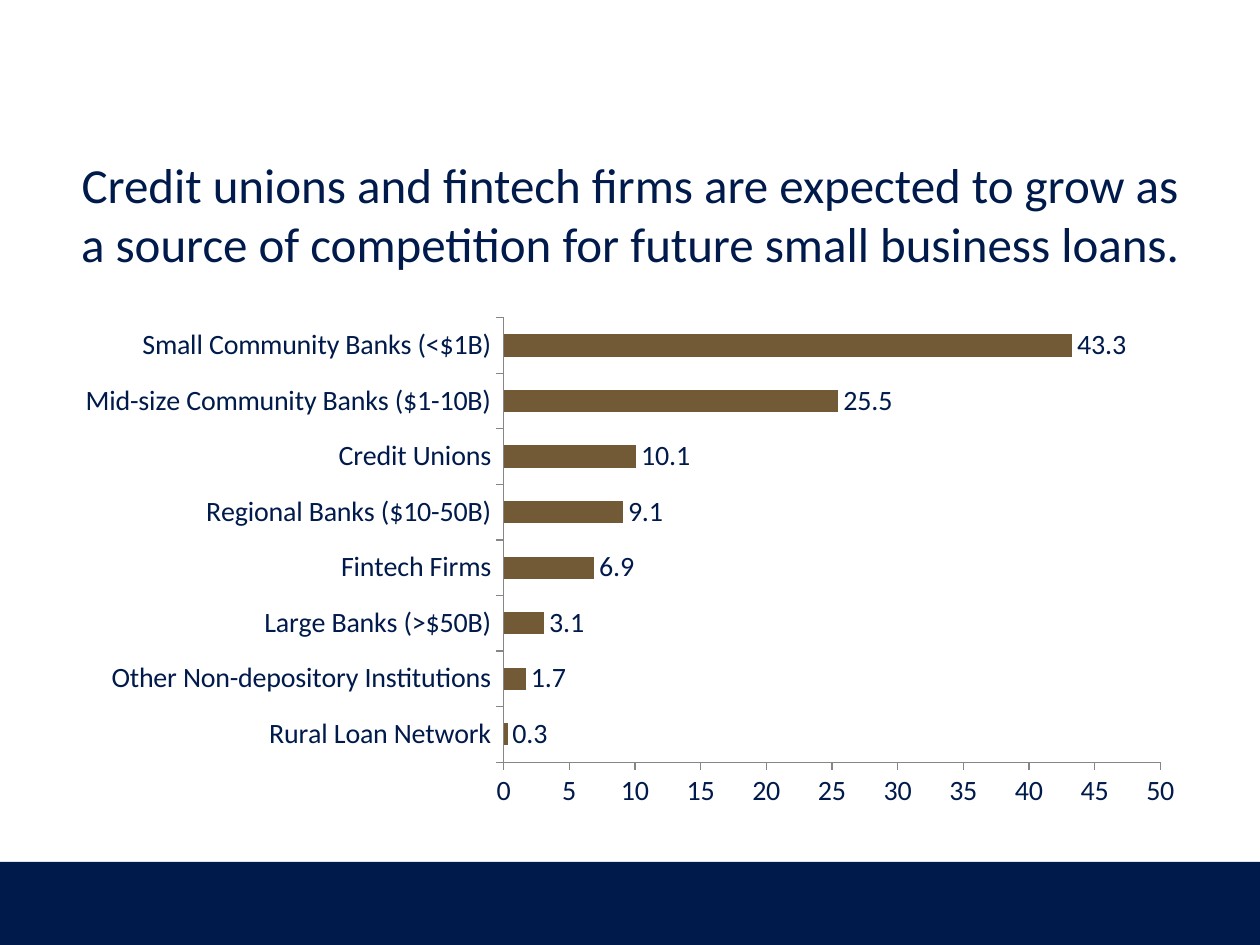
from pptx import Presentation
from pptx import util as u
from pptx.chart.data import CategoryChartData
from pptx.dml.color import RGBColor
from pptx.enum import chart as ch, shapes, text

COLORS = {"navy": "001A4B", "brown": "715A35", "axis": "868686", "white": "FFFFFF"}
FONT = "Calibri"
WIDTH, HEIGHT = 10, 7.5

LENDERS = [
    ("Rural Loan Network", 0.3),
    ("Other Non-depository Institutions", 1.7),
    ("Large Banks (>$50B)", 3.1),
    ("Fintech Firms", 6.9),
    ("Regional Banks ($10-50B)", 9.1),
    ("Credit Unions", 10.1),
    ("Mid-size Community Banks ($1-10B)", 25.5),
    ("Small Community Banks (<$1B)", 43.3),
]


def rgb(name):
    return RGBColor.from_string(COLORS[name])


def set_font(font, size, color="navy"):
    font.name = FONT
    font.size = u.Pt(size)
    font.color.rgb = rgb(color)


def write(tf, words, size=16, color="navy", align=text.PP_ALIGN.CENTER):
    p = tf.paragraphs[0]
    p.alignment = align
    r = p.add_run()
    r.text = words
    set_font(r.font, size, color)


class Deck:
    """Holds the style and the current slide; boxes are in inches on the slide."""

    def __init__(self):
        self.prs = Presentation()
        self.prs.slide_width = u.Inches(WIDTH)
        self.prs.slide_height = u.Inches(HEIGHT)
        self.s = self.prs.slides.add_slide(self.prs.slide_layouts[6])
        fill = self.s.background.fill
        fill.solid()
        fill.fore_color.rgb = rgb("white")

    def box(self, x, y, w, h):
        return [u.Inches(v) for v in (x, y, w, h)]

    def band(self, *at, color="navy"):
        sp = self.s.shapes.add_shape(shapes.MSO_SHAPE.RECTANGLE, *self.box(*at))
        sp.shadow.inherit = False
        sp.fill.solid()
        sp.fill.fore_color.rgb = rgb(color)
        sp.line.fill.background()

    def title(self, words, *at, **fmt):
        tf = self.s.shapes.add_textbox(*self.box(*at)).text_frame
        tf.word_wrap = True
        tf.vertical_anchor = text.MSO_ANCHOR.MIDDLE
        write(tf, words, **fmt)

    def bar_chart(self, rows, *at, size=16, top=50, step=5):
        data = CategoryChartData(number_format="General")
        data.categories = [name for name, _ in rows]
        data.add_series("Series 1", [value for _, value in rows])
        chart = self.s.shapes.add_chart(
            ch.XL_CHART_TYPE.BAR_CLUSTERED, *self.box(*at), data).chart
        chart.has_legend = chart.has_title = False
        set_font(chart.font, size)

        # Axes
        for axis in (chart.category_axis, chart.value_axis):
            axis.has_major_gridlines = False
            axis.major_tick_mark = ch.XL_TICK_MARK.OUTSIDE
            axis.minor_tick_mark = ch.XL_TICK_MARK.NONE
            axis.format.line.color.rgb = rgb("axis")
            axis.format.line.width = u.Pt(0.75)
            set_font(axis.tick_labels.font, size)
        chart.value_axis.minimum_scale = 0
        chart.value_axis.maximum_scale = top
        chart.value_axis.major_unit = step

        # Bars and their values
        plot = chart.plots[0]
        plot.gap_width = 150
        plot.vary_by_categories = False
        fill = plot.series[0].format.fill
        fill.solid()
        fill.fore_color.rgb = rgb("brown")
        plot.has_data_labels = True
        labels = plot.data_labels
        labels.show_value = True
        labels.number_format = "#,##0.0"
        labels.number_format_is_linked = False
        labels.position = ch.XL_LABEL_POSITION.OUTSIDE_END
        set_font(labels.font, size)


def main():
    deck = Deck()
    margin, band = 0.5, 0.66
    inner = WIDTH - 2 * margin

    # Footer band
    deck.band(0, HEIGHT - band, WIDTH, band)
    # Headline
    deck.title("Credit unions and fintech firms are expected to grow as "
               "a source of competition for future small business loans.",
               margin, 1.07, inner, 1.25, size=28)
    # Expected competitors
    deck.bar_chart(LENDERS, margin, 2.44, inner, 4.06)
    deck.prs.save("out.pptx")


if __name__ == "__main__":
    main()
